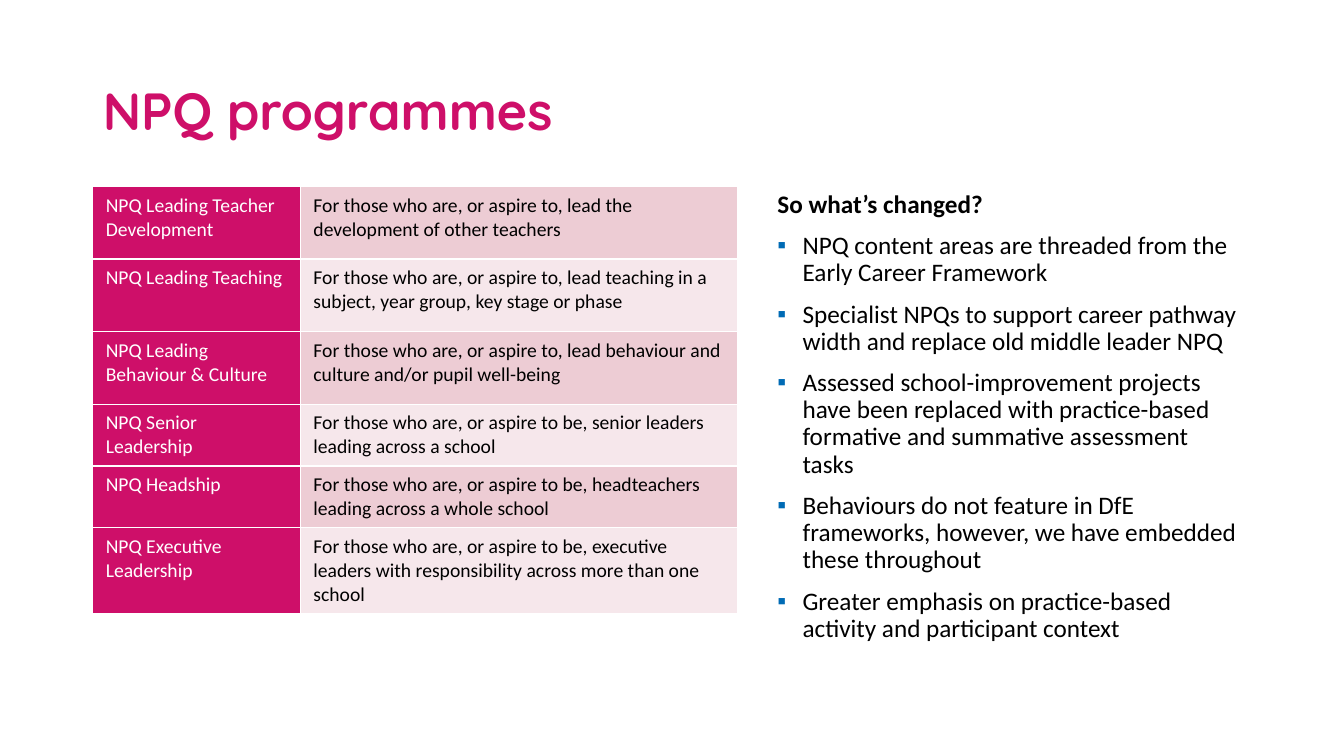
from dataclasses import dataclass

from lxml import etree
from pptx import Presentation
from pptx import util as u
from pptx.dml.color import RGBColor
from pptx.enum import text
from pptx.oxml import ns


@dataclass(frozen=True)
class Theme:
    """Colours, fonts and type sizes of the slide."""
    accent: str = "CE0F69"
    bullet: str = "006BB5"
    ink: str = "000000"
    paper: str = "FFFFFF"
    bands: tuple = ("EDCCD4", "F6E7EB")
    heading_font: str = "Quicksand"
    body_font: str = "Calibri"
    title_size: float = 37.3
    body_size: float = 18
    table_size: float = 14
    leading: float = 0.9
    gap: float = 10
    hang: float = 0.25


PROGRAMMES = [
    ("NPQ Leading Teacher Development",
     "For those who are, or aspire to, lead the development of other teachers"),
    ("NPQ Leading Teaching",
     "For those who are, or aspire to, lead teaching in a subject, year group, key stage or phase"),
    ("NPQ Leading Behaviour & Culture",
     "For those who are, or aspire to, lead behaviour and culture and/or pupil well-being"),
    ("NPQ Senior Leadership",
     "For those who are, or aspire to be, senior leaders leading across a school"),
    ("NPQ Headship",
     "For those who are, or aspire to be, headteachers leading across a whole school"),
    ("NPQ Executive Leadership",
     "For those who are, or aspire to be, executive leaders with responsibility across more than one school"),
]
CHANGES = [
    "NPQ content areas are threaded from the Early Career Framework",
    "Specialist NPQs to support career pathway width and replace old middle leader NPQ",
    "Assessed school-improvement projects have been replaced with practice-based formative and summative assessment tasks",
    "Behaviours do not feature in DfE frameworks, however, we have embedded these throughout",
    "Greater emphasis on practice-based activity and participant context",
]


def apply(target, values):
    """Set every attribute named in a dict of format values."""
    for name, value in values.items():
        setattr(target, name, value)


def add_element(parent, tag, **attributes):
    """Append a drawing element and return it."""
    return etree.SubElement(parent, ns.qn(tag), attributes)


class SlideBuilder:
    """Holds the theme and slide; lengths are percentages of the slide."""

    def __init__(self, deck, theme):
        """Add a slide with title and body placeholders."""
        self.deck, self.theme = deck, theme
        self.page = deck.slides.add_slide(deck.slide_layouts[1])

    def across(self, share):
        """Turn a percentage of the width into a length."""
        return u.Emu(round(self.deck.slide_width * share / 100))

    def down(self, share):
        """Turn a percentage of the height into a length."""
        return u.Emu(round(self.deck.slide_height * share / 100))

    def place(self, left, top, width, height):
        """Return the position values of a box."""
        return {"left": self.across(left), "top": self.down(top),
                "width": self.across(width), "height": self.down(height)}

    def add_span(self, para, words, size, colour, font=None, bold=False):
        """Add one formatted span to a paragraph."""
        span = para.add_run()
        span.text = words
        apply(span.font, {"name": font or self.theme.body_font,
                          "size": u.Pt(size), "bold": bold})
        span.font.color.rgb = RGBColor.from_string(colour)

    def title(self, words, area):
        """Fill and place the title."""
        box, theme = self.page.shapes.title, self.theme
        apply(box, self.place(*area))
        apply(box.text_frame, {"vertical_anchor": text.MSO_ANCHOR.MIDDLE,
                               "auto_size": text.MSO_AUTO_SIZE.NONE})
        para = box.text_frame.paragraphs[0]
        apply(para, {"alignment": text.PP_ALIGN.LEFT, "line_spacing": theme.leading})
        self.add_span(para, words, theme.title_size, theme.accent, theme.heading_font, True)

    def bullets(self, heading, points, area):
        """Fill the body with a bold heading and a bulleted list."""
        box, theme = self.page.placeholders[1], self.theme
        apply(box, self.place(*area))
        frame = box.text_frame
        apply(frame, {"word_wrap": True, "auto_size": text.MSO_AUTO_SIZE.NONE})
        for number, words in enumerate([heading, *points]):
            para = frame.add_paragraph() if number else frame.paragraphs[0]
            apply(para, {"line_spacing": theme.leading,
                         "space_before": u.Pt(theme.gap if number else 0)})
            properties = para._p.get_or_add_pPr()
            hang = u.Inches(theme.hang if number else 0)
            properties.set("marL", str(hang))
            properties.set("indent", str(-hang))
            if number:
                colour = add_element(properties, "a:buClr")
                add_element(colour, "a:srgbClr", val=theme.bullet)
                add_element(properties, "a:buChar", char="▪")
            else:
                add_element(properties, "a:buNone")
            self.add_span(para, words, theme.body_size, theme.ink, bold=number == 0)

    def cell(self, cell, words, fill, colour):
        """Fill and border one table cell and set its words."""
        apply(cell, {"margin_left": u.Inches(0.13), "margin_right": u.Inches(0.13),
                     "margin_top": u.Inches(0.07), "margin_bottom": u.Inches(0.07)})
        properties = cell._tc.get_or_add_tcPr()
        for side in "LRTB":
            line = add_element(properties, f"a:ln{side}", w=str(u.Pt(1)))
            add_element(add_element(line, "a:solidFill"), "a:srgbClr", val=self.theme.paper)
        cell.fill.solid()
        cell.fill.fore_color.rgb = RGBColor.from_string(fill)
        self.add_span(cell.text_frame.paragraphs[0], words, self.theme.table_size, colour)

    def table(self, entries, left, top, widths, heights):
        """Add a two-column table with banded descriptions."""
        theme = self.theme
        area = self.place(left, top, sum(widths), sum(heights))
        grid = self.page.shapes.add_table(len(entries), len(widths), **area).table
        apply(grid, {"first_row": False, "horz_banding": False})
        for column, width in zip(grid.columns, widths):
            column.width = self.across(width)
        for number, (entry, height) in enumerate(zip(entries, heights)):
            grid.rows[number].height = self.down(height)
            fills = (theme.accent, theme.bands[number % 2])
            for cell, words, fill, colour in zip(
                    grid.rows[number].cells, entry, fills, (theme.paper, theme.ink)):
                self.cell(cell, words, fill, colour)


def main():
    """Build and save the slide."""
    deck = Presentation()
    apply(deck, {"slide_width": u.Inches(13.33), "slide_height": u.Inches(7.5)})
    slide = SlideBuilder(deck, Theme())
    left, top = 6.9, 24.67
    tall, short = 9.6, 6.8
    slide.title("NPQ programmes", (left, 5.33, 86.27, 19.33))
    slide.bullets("So what’s changed?", CHANGES, (57.09, top, 36.08, 68.53))
    slide.table(PROGRAMMES, left, top, (15.45, 32.56),
                (tall, tall, tall, short, short, tall))
    deck.save("out.pptx")


if __name__ == "__main__":
    main()
